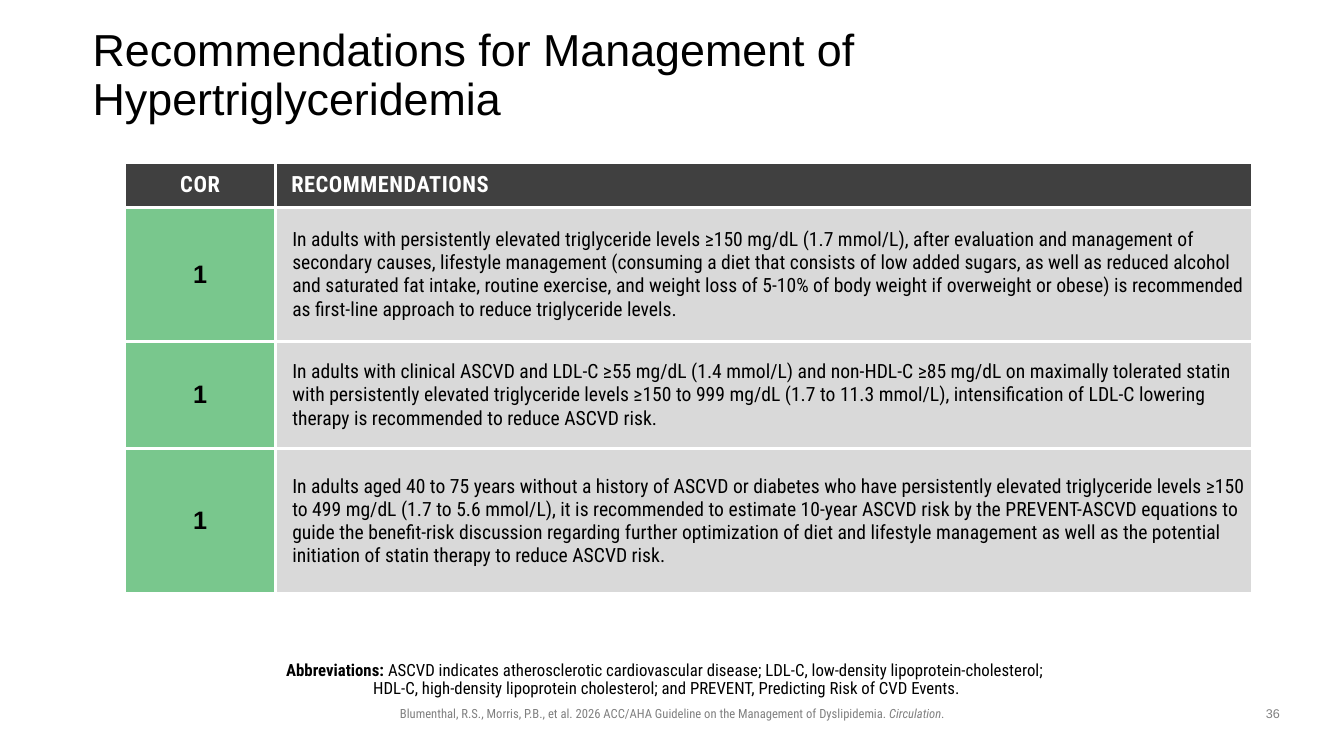
"""Build the hypertriglyceridemia recommendations slide."""
from lxml.etree import SubElement
from pptx import Presentation
from pptx.dml.color import RGBColor
from pptx.enum.text import MSO_ANCHOR as ANCHOR, PP_ALIGN as ALIGN
from pptx.oxml.ns import qn
from pptx.util import Pt

COLORS = {"black": "000000", "white": "FFFFFF", "gray": "808080",
          "header": "404040", "class1": "79C78D", "body": "D9D9D9"}
SANS, CONDENSED = "Arial", "Roboto Condensed"
TITLE = "Recommendations for Management of Hypertriglyceridemia"
RECOMMENDATIONS = [
    ("1", 95.8, "In adults with persistently elevated triglyceride levels ≥150 mg/dL "
     "(1.7 mmol/L), after evaluation and management of secondary causes, lifestyle "
     "management (consuming a diet that consists of low added sugars, as well as "
     "reduced alcohol and saturated fat intake, routine exercise, and weight loss of "
     "5-10% of body weight if overweight or obese) is recommended as first-line "
     "approach to reduce triglyceride levels."),
    ("1", 76.3, "In adults with clinical ASCVD and LDL-C ≥55 mg/dL (1.4 mmol/L) and "
     "non-HDL-C ≥85 mg/dL on maximally tolerated statin with persistently elevated "
     "triglyceride levels ≥150 to 999 mg/dL (1.7 to 11.3 mmol/L), intensification of "
     "LDL-C lowering therapy is recommended to reduce ASCVD risk."),
    ("1", 103.7, "In adults aged 40 to 75 years without a history of ASCVD or diabetes "
     "who have persistently elevated triglyceride levels ≥150 to 499 mg/dL (1.7 to 5.6 "
     "mmol/L), it is recommended to estimate 10-year ASCVD risk by the PREVENT-ASCVD "
     "equations to guide the benefit-risk discussion regarding further optimization of "
     "diet and lifestyle management as well as the potential initiation of statin "
     "therapy to reduce ASCVD risk."),
]


def rgb(name):
    """Return the named colour."""
    return RGBColor.from_string(COLORS[name])


def add_run(p, text, size, font=CONDENSED, color="black", bold=False, italic=False,
            spacing=0):
    """Add one formatted run to a paragraph."""
    r = p.add_run()
    r.text = text
    r.font.size, r.font.name = Pt(size), font
    r.font.bold, r.font.italic = bold, italic
    r.font.color.rgb = rgb(color)
    if spacing:
        r.font._element.set("spc", str(round(spacing * 100)))


def add_text(s, box, align=ALIGN.CENTER, anchor=ANCHOR.TOP, insets=(7.2, 3.6, 7.2, 3.6),
             line_spacing=1.0):
    """Add a wrapping text box and return its paragraph."""
    tf = s.shapes.add_textbox(*map(Pt, box)).text_frame
    tf.word_wrap, tf.vertical_anchor = True, anchor
    tf.margin_left, tf.margin_top, tf.margin_right, tf.margin_bottom = map(Pt, insets)
    p = tf.paragraphs[0]
    p.alignment, p.line_spacing = align, line_spacing
    return p


def add_borders(cell, width=2.25):
    """Draw white borders on all sides of a cell."""
    tcPr = cell._tc.get_or_add_tcPr()
    for side in ("lnL", "lnR", "lnT", "lnB"):
        ln = SubElement(tcPr, qn(f"a:{side}"), w=str(Pt(width)))
        fill = SubElement(ln, qn("a:solidFill"))
        SubElement(fill, qn("a:srgbClr"), val=COLORS["white"])


def fill_cell(cell, text, fill, size, align=ALIGN.LEFT, indent=0, inset=3.6, **style):
    """Set the fill, borders and text of a table cell."""
    add_borders(cell)
    cell.fill.solid()
    cell.fill.fore_color.rgb = rgb(fill)
    cell.vertical_anchor = ANCHOR.MIDDLE
    cell.margin_left = cell.margin_right = Pt(inset)
    cell.margin_top = cell.margin_bottom = Pt(3.6)
    p = cell.text_frame.paragraphs[0]
    p.alignment = align
    if indent:
        pPr = p._p.get_or_add_pPr()
        pPr.set("marL", str(Pt(indent)))
        pPr.set("indent", "0")
    add_run(p, text, size, **style)


def add_recommendations(s):
    """Add the table of recommendations."""
    heights = [32.4] + [height for _, height, _ in RECOMMENDATIONS]
    widths = [107.3, 697.7]
    table = s.shapes.add_table(len(heights), len(widths), Pt(89.3), Pt(115.9),
                               Pt(sum(widths)), Pt(sum(heights))).table
    for column, width in zip(table.columns, widths):
        column.width = Pt(width)
    for row, height in zip(table.rows, heights):
        row.height = Pt(height)
    header = dict(fill="header", size=16, inset=7.2, color="white", bold=True)
    fill_cell(table.cell(0, 0), "COR", align=ALIGN.CENTER, spacing=0.5, **header)
    fill_cell(table.cell(0, 1), "RECOMMENDATIONS", indent=4.3, spacing=0.4, **header)
    for i, (cor, _, text) in enumerate(RECOMMENDATIONS, 1):
        fill_cell(table.cell(i, 0), cor, "class1", 18, align=ALIGN.CENTER,
                  font=SANS, bold=True)
        fill_cell(table.cell(i, 1), text, "body", 14, indent=8.6)


def main():
    """Build and save the slide."""
    prs = Presentation()
    prs.slide_width, prs.slide_height = Pt(960), Pt(540)
    s = prs.slides.add_slide(prs.slide_layouts[6])

    p = add_text(s, (66.2, 28.8, 828, 51.8), ALIGN.LEFT, ANCHOR.MIDDLE, (0, 0, 0, 0), 0.9)
    add_run(p, TITLE, 32, SANS)

    add_recommendations(s)

    p = add_text(s, (135.4, 480.2, 689, 22.3), anchor=ANCHOR.BOTTOM,
                 insets=(0, 3.6, 7.2, 3.6), line_spacing=0.9)
    add_run(p, "Abbreviations: ", 12, bold=True)
    add_run(p, "ASCVD indicates atherosclerotic cardiovascular disease; "
            "LDL-C, low-density lipoprotein-cholesterol; ", 12)
    p.add_line_break()
    add_run(p, "HDL-C, high-density lipoprotein cholesterol; "
            "and PREVENT, Predicting Risk of CVD Events.", 12)

    p = add_text(s, (169.9, 500.4, 620.6, 18))
    add_run(p, "Blumenthal, R.S., Morris, P.B., et al. 2026 ACC/AHA Guideline on the "
            "Management of Dyslipidemia. ", 9, color="gray")
    add_run(p, "Circulation", 9, color="gray", italic=True)
    add_run(p, ".", 9, color="gray")

    p = add_text(s, (894.2, 500.4, 30.2, 18.7))
    add_run(p, "36", 9, SANS, "gray")
    prs.save("out.pptx")


if __name__ == "__main__":
    main()
